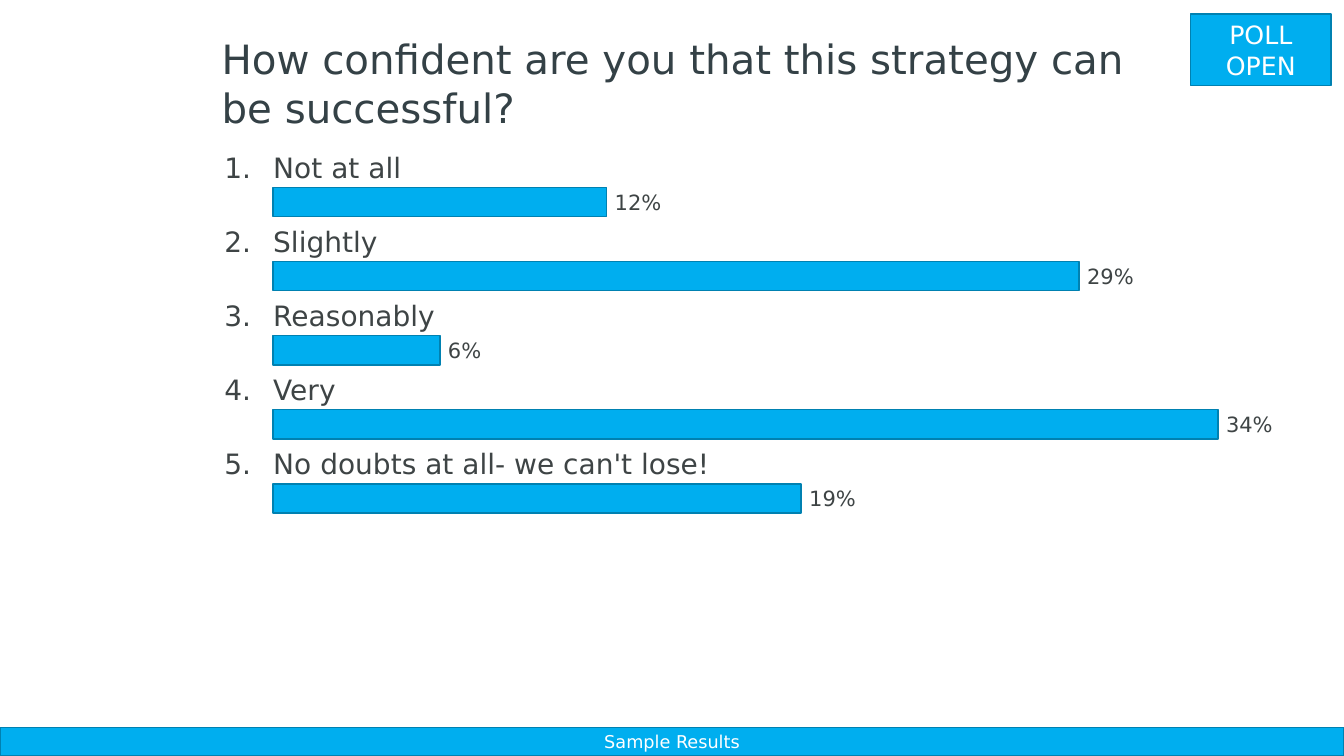
from pptx import Presentation
from pptx.dml.color import RGBColor
from pptx.enum.shapes import MSO_SHAPE
from pptx.enum.text import MSO_ANCHOR, PP_ALIGN
from pptx.util import Inches, Pt

QUESTION = "How confident are you that this strategy can be successful?"
STATUS = "POLL OPEN"
FOOTER = "Sample Results"
ANSWERS = [
    ("Not at all", 12),
    ("Slightly", 29),
    ("Reasonably", 6),
    ("Very", 34),
    ("No doubts at all- we can't lose!", 19),
]

FONT = "DejaVu Sans"
BLUE = RGBColor(0x00, 0xAE, 0xEF)
BLUE_EDGE = RGBColor(0x00, 0x81, 0xB1)
WHITE = RGBColor(0xFF, 0xFF, 0xFF)
SLATE = RGBColor(0x34, 0x41, 0x46)
GREY = RGBColor(0x3E, 0x44, 0x45)
RECTANGLE = MSO_SHAPE.RECTANGLE
TOP, MIDDLE, BOTTOM = MSO_ANCHOR.TOP, MSO_ANCHOR.MIDDLE, MSO_ANCHOR.BOTTOM
LEFT, CENTER, RIGHT = PP_ALIGN.LEFT, PP_ALIGN.CENTER, PP_ALIGN.RIGHT

SLIDE_W, SLIDE_H = 13.33, 7.5
LIST_LEFT, LIST_TOP = 2.1, 1.43
ROW_PITCH = 0.735
NUMBER_W = 0.61
BAR_LEFT = LIST_LEFT + NUMBER_W
BAR_OFFSET, BAR_H = 0.43, 0.29
LONGEST_BAR = 9.37
DEFAULT_INSETS = (0.1, 0.05, 0.1, 0.05)


def write(shape, text, size, color, align=LEFT, anchor=TOP, insets=DEFAULT_INSETS):
    frame = shape.text_frame
    frame.word_wrap = True
    frame.vertical_anchor = anchor
    (frame.margin_left, frame.margin_top,
     frame.margin_right, frame.margin_bottom) = map(Inches, insets)
    paragraph = frame.paragraphs[0]
    paragraph.alignment = align
    run = paragraph.add_run()
    run.text = text
    run.font.name = FONT
    run.font.size = Pt(size)
    run.font.color.rgb = color


def add_label(slide, box, *text_style, **layout):
    label = slide.shapes.add_textbox(*map(Inches, box))
    write(label, *text_style, **layout)


def add_block(slide, box):
    block = slide.shapes.add_shape(RECTANGLE, *map(Inches, box))
    block.shadow.inherit = False
    block.fill.solid()
    block.fill.fore_color.rgb = BLUE
    block.line.color.rgb = BLUE_EDGE
    block.line.width = Pt(1)
    return block


def add_answer(slide, index, answer, percent):
    top = LIST_TOP + index * ROW_PITCH
    bar_top = top + BAR_OFFSET
    bar_w = LONGEST_BAR * percent / max(share for _, share in ANSWERS)
    add_label(slide, (LIST_LEFT, top, NUMBER_W, 0.39), f"{index + 1}.", 20, GREY,
              align=RIGHT, insets=(0.1, 0.06, 0.22, 0))
    add_label(slide, (BAR_LEFT, top, 10.08, 0.42), answer, 20, GREY,
              insets=(0, 0.06, 0, 0.03))
    add_label(slide, (BAR_LEFT + bar_w, bar_top + 0.02, 0.58, 0.25), f"{percent}%",
              15, GREY, insets=(0.08, 0, 0, 0))
    add_block(slide, (BAR_LEFT, bar_top, bar_w, BAR_H))


def main():
    deck = Presentation()
    deck.slide_width, deck.slide_height = Inches(SLIDE_W), Inches(SLIDE_H)
    slide = deck.slides.add_slide(deck.slide_layouts[6])

    footer = add_block(slide, (0, 7.22, SLIDE_W, 0.28))
    write(footer, FOOTER, 12.6, WHITE, align=CENTER, anchor=MIDDLE)
    add_label(slide, (2.1, 0.29, 9.52, 1.06), QUESTION, 28.8, SLATE, anchor=BOTTOM)
    status = add_block(slide, (11.81, 0.14, 1.39, 0.71))
    write(status, STATUS, 18, WHITE, align=CENTER, anchor=MIDDLE)

    for index, (answer, percent) in enumerate(ANSWERS):
        add_answer(slide, index, answer, percent)

    deck.save("out.pptx")


if __name__ == "__main__":
    main()
